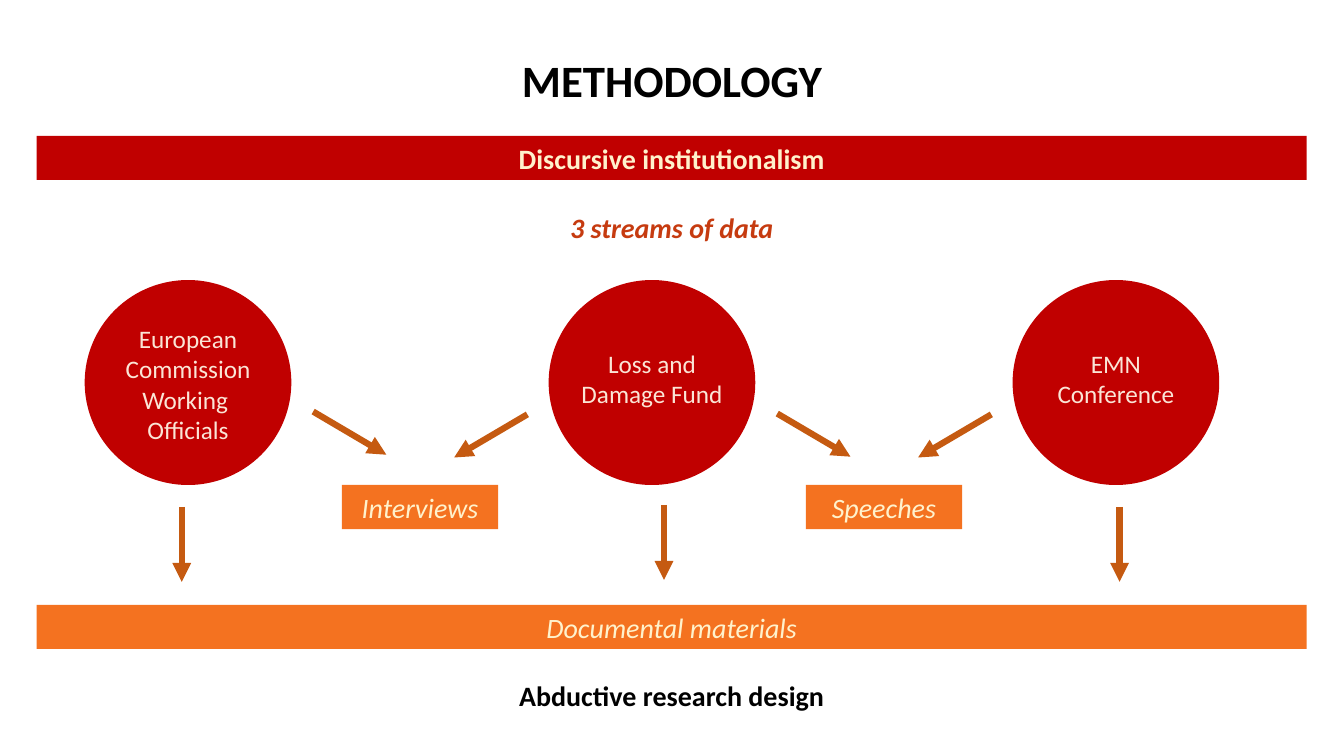
"""Build the methodology slide: three data streams feeding research materials."""
from pptx import Presentation
from pptx.dml.color import RGBColor
from pptx.enum.shapes import MSO_CONNECTOR as LINE, MSO_SHAPE as SHAPE
from pptx.enum.text import MSO_ANCHOR as ANCHOR, PP_ALIGN as ALIGN
from pptx.oxml.ns import qn
from pptx.util import Pt
from lxml.etree import SubElement

RED, ORANGE, RUST, BROWN = "C00000", "F47220", "C63B10", "C55A11"
CREAM, PEACH, BLACK = "FFF2CC", "FBE5D6", "000000"
BAR_LEFT, BAR_WIDTH, BAR_HEIGHT = 26.2, 907.2, 31.5
STREAM_LEFT, STREAM_TOP, STREAM_STEP = 60.5, 200, 331.4
STREAM_WIDTH, STREAM_HEIGHT = 147.6, 146.4


def color(target, hex_code):
    target.rgb = RGBColor.from_string(hex_code)


def label(text, left, top, width, height, fill=None, ink=CREAM, size=20,
          bold=False, italic=False):
    box = (Pt(left), Pt(top), Pt(width), Pt(height))
    if fill:
        panel = slide.shapes.add_shape(SHAPE.RECTANGLE, *box)
        panel.shadow.inherit = False
        panel.fill.solid()
        color(panel.fill.fore_color, fill)
        panel.line.fill.background()
    else:
        panel = slide.shapes.add_textbox(*box)
    frame = panel.text_frame
    frame.word_wrap = True
    frame.vertical_anchor = ANCHOR.MIDDLE if fill else ANCHOR.TOP
    paragraph = frame.paragraphs[0]
    paragraph.text = text
    paragraph.alignment = ALIGN.CENTER
    for run in paragraph.runs:
        run.font.name, run.font.size = "Calibri", Pt(size)
        run.font.bold, run.font.italic = bold, italic
        color(run.font.color, ink)


deck = Presentation()
deck.slide_width, deck.slide_height = Pt(960), Pt(540)
slide = deck.slides.add_slide(deck.slide_layouts[6])

label("METHODOLOGY", 360, 33.8, 240, 46, ink=BLACK, size=32, bold=True)

for text, top, style in [
    ("Discursive institutionalism", 97, dict(fill=RED, bold=True)),
    ("3 streams of data", 146.5, dict(ink=RUST, bold=True, italic=True)),
    ("Documental materials", 432, dict(fill=ORANGE, italic=True)),
    ("Abductive research design", 481, dict(ink=BLACK, bold=True)),
]:
    label(text, BAR_LEFT, top, BAR_WIDTH, BAR_HEIGHT, **style)

streams = [
    ("European Commission Working \vOfficials", 0, 227.5, 94.3),
    ("Loss and Damage Fund", 12.5, 245, 51),
    ("EMN Conference", 12.5, 245, 51),
]
for index, (text, inset, top, height) in enumerate(streams):
    left = STREAM_LEFT + index * STREAM_STEP
    circle = slide.shapes.add_shape(SHAPE.OVAL, Pt(left), Pt(STREAM_TOP),
                                    Pt(STREAM_WIDTH), Pt(STREAM_HEIGHT))
    circle.shadow.inherit = False
    circle.fill.solid()
    color(circle.fill.fore_color, RED)
    circle.line.fill.background()
    label(text, left + inset, top, STREAM_WIDTH - 2 * inset, height,
          ink=PEACH, size=18)

for index, text in enumerate(["Interviews", "Speeches"]):
    label(text, 244.2 + index * STREAM_STEP, 346.4, 111.6, BAR_HEIGHT,
          fill=ORANGE, italic=True)

down, right, left = (0, 53.5), (52.3, 30.8), (-52.3, 30.8)
for x, y, (dx, dy) in [
    (129.8, 362.1, down), (474.3, 360.7, down), (799.7, 362.1, down),
    (223.7, 294, right), (376.7, 296, left),
    (555.2, 295.4, right), (708.1, 296, left),
]:
    arrow = slide.shapes.add_connector(LINE.STRAIGHT, Pt(x), Pt(y),
                                       Pt(x + dx), Pt(y + dy))
    arrow.line.width = Pt(4.5)
    color(arrow.line.color, BROWN)
    SubElement(arrow.line._get_or_add_ln(), qn("a:tailEnd"), type="triangle")
    SubElement(arrow._element.spPr, qn("a:effectLst"))

deck.save("out.pptx")
